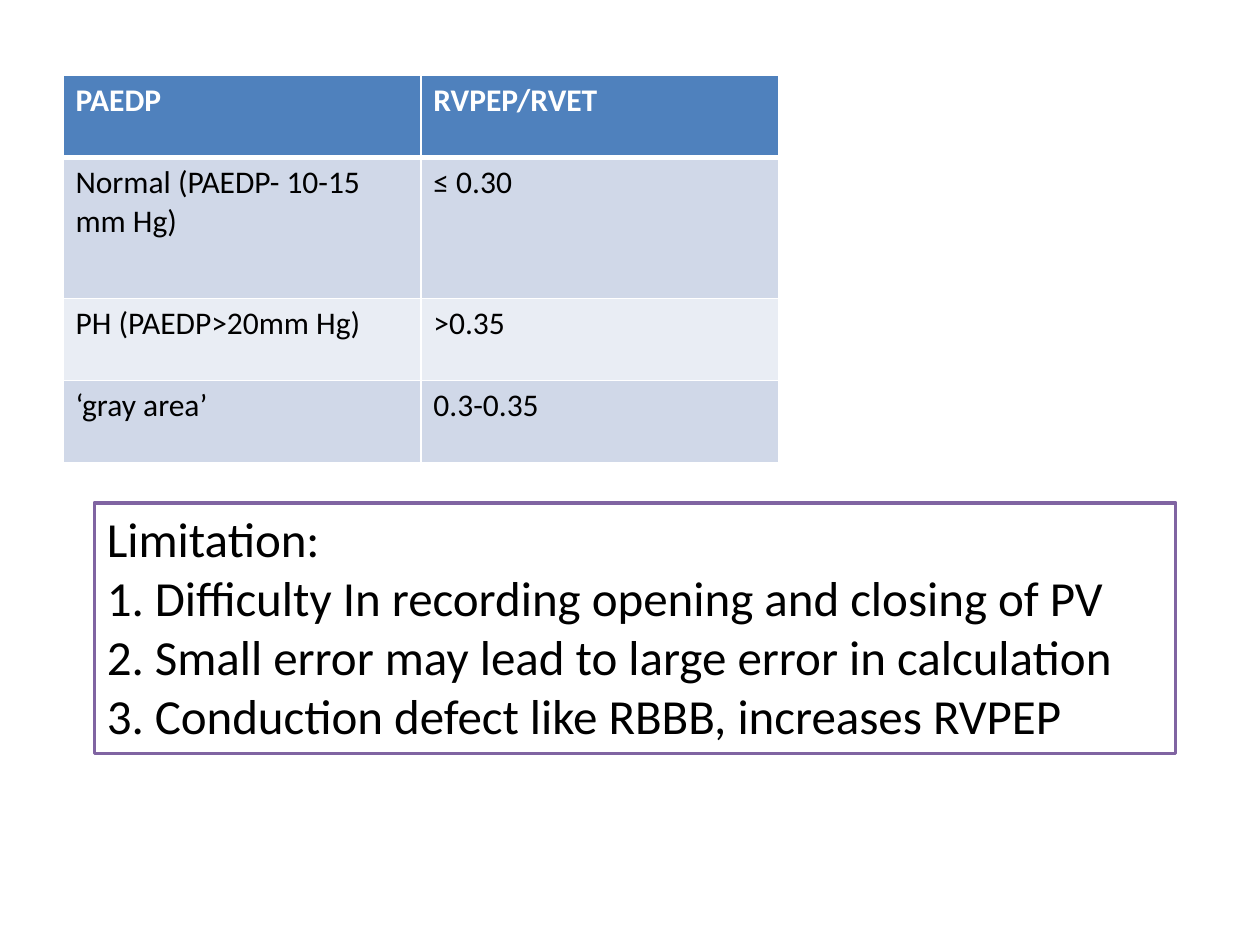
from dataclasses import dataclass

from lxml.etree import SubElement
from pptx import Presentation
from pptx.dml.color import RGBColor
from pptx.enum.shapes import MSO_SHAPE as Shape
from pptx.enum.text import MSO_ANCHOR as Anchor, MSO_AUTO_SIZE as AutoSize, PP_ALIGN as Align
from pptx.oxml.ns import qn
from pptx.util import Inches, Pt


@dataclass(frozen=True)
class Theme:
    font: str = "Calibri"
    white: str = "FFFFFF"
    ink: str = "000000"
    header: str = "4F81BD"
    bands: tuple = ("D0D8E8", "E9EDF4")
    frame: str = "8064A2"
    table_size: int = 18
    note_size: int = 28


def rgb(color):
    return RGBColor.from_string(color)


def write(p, text, *, font, size, color, bold=False):
    p.alignment = Align.LEFT
    r = p.add_run()
    r.text = text
    r.font.name = font
    r.font.size = Pt(size)
    r.font.bold = bold
    r.font.color.rgb = rgb(color)


def number(p, indent):
    """Turn the paragraph into an item of a numbered list."""
    pPr = p._p.get_or_add_pPr()
    pPr.set("marL", str(indent))
    pPr.set("indent", str(-indent))
    SubElement(pPr, qn("a:buFont"), typeface="+mj-lt")
    SubElement(pPr, qn("a:buAutoNum"), type="arabicPeriod")


def set_borders(cell, color, **widths):
    """Draw cell borders; widths are points by side, in the order L, R, T, B."""
    tcPr = cell._tc.get_or_add_tcPr()
    for side, width in widths.items():
        ln = SubElement(tcPr, qn(f"a:ln{side}"), w=str(Pt(width)))
        fill = SubElement(ln, qn("a:solidFill"))
        SubElement(fill, qn("a:srgbClr"), val=color)


class SlideBuilder:
    def __init__(self, slide, theme):
        self.s = slide
        self.theme = theme

    def table(self, rows, left, top, col_width, row_heights):
        t = self.theme
        n_cols = len(rows[0])
        table = self.s.shapes.add_table(
            len(rows), n_cols, Inches(left), Inches(top),
            Inches(col_width * n_cols), Inches(sum(row_heights))).table
        for col in table.columns:
            col.width = Inches(col_width)
        for i, (texts, height) in enumerate(zip(rows, row_heights)):
            table.rows[i].height = Inches(height)
            is_header = i == 0
            for j, text in enumerate(texts):
                cell = table.cell(i, j)
                set_borders(cell, t.white, L=1, R=1,
                            T=3 if i == 1 else 1, B=3 if is_header else 1)
                cell.fill.solid()
                cell.fill.fore_color.rgb = rgb(
                    t.header if is_header else t.bands[(i - 1) % 2])
                write(cell.text_frame.paragraphs[0], text, font=t.font,
                      size=t.table_size, bold=is_header,
                      color=t.white if is_header else t.ink)

    def numbered_box(self, heading, items, left, top, width, height):
        t = self.theme
        sp = self.s.shapes.add_shape(
            Shape.RECTANGLE, Inches(left), Inches(top), Inches(width), Inches(height))
        sp.shadow.inherit = False
        sp.fill.solid()
        sp.fill.fore_color.rgb = rgb(t.white)
        sp.line.color.rgb = rgb(t.frame)
        sp.line.width = Pt(2)
        tf = sp.text_frame
        tf.word_wrap = True
        tf.auto_size = AutoSize.SHAPE_TO_FIT_TEXT
        tf.vertical_anchor = Anchor.TOP
        style = dict(font=t.font, size=t.note_size, color=t.ink)
        write(tf.paragraphs[0], heading, **style)
        for item in items:
            p = tf.add_paragraph()
            write(p, item, **style)
            number(p, Inches(0.38))


def main():
    prs = Presentation()
    prs.slide_width, prs.slide_height = Inches(10), Inches(7.5)
    builder = SlideBuilder(prs.slides.add_slide(prs.slide_layouts[6]), Theme())
    builder.table(
        [("PAEDP", "RVPEP/RVET"),
         ("Normal (PAEDP- 10-15 mm Hg)", "≤ 0.30"),
         ("PH (PAEDP>20mm Hg)", ">0.35"),
         ("‘gray area’", "0.3-0.35")],
        left=0.5, top=0.6, col_width=2.84, row_heights=(0.65, 1.12, 0.65, 0.65))
    builder.numbered_box(
        "Limitation:",
        ["Difficulty In recording opening and closing of PV",
         "Small error may lead to large error in calculation",
         "Conduction defect like RBBB, increases RVPEP"],
        left=0.75, top=3.99, width=8.58, height=1.99)
    prs.save("out.pptx")


if __name__ == "__main__":
    main()
